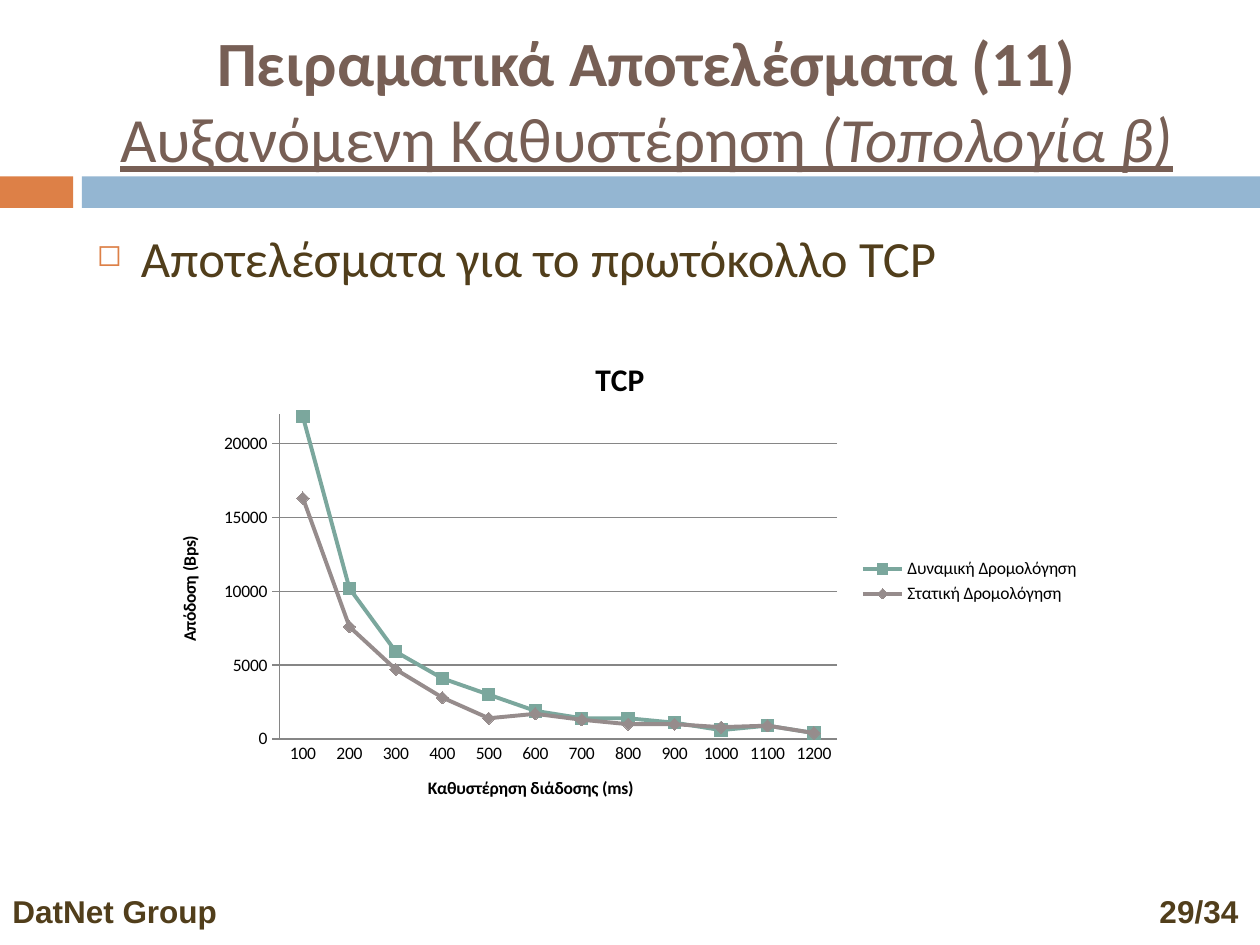
"""Build the slide on TCP throughput under growing delay."""
from lxml import etree
from pptx import Presentation, util as u
from pptx.chart.data import CategoryChartData
from pptx.dml.color import RGBColor
from pptx.enum import chart as ch, shapes, text
from pptx.oxml import parse_xml
from pptx.oxml.ns import nsdecls, qn


def tint(code):
    return RGBColor.from_string(code)


def write(para, words, size, code, bold=False, face="Calibri"):
    run = para.add_run()
    run.text = words
    run.font.size, run.font.name, run.font.bold = u.Pt(size), face, bold
    run.font.color.rgb = tint(code)
    return run.font


deck = Presentation()
deck.slide_width, deck.slide_height = u.Inches(10), u.Inches(7.5)
wide, high = deck.slide_width, deck.slide_height
col, row = wide // 100, high // 75
slide = deck.slides.add_slide(deck.slide_layouts[6])

for left, span, code in ((0, 5.8, "DD8047"), (6.5, 93.5, "94B6D2")):
    bar = slide.shapes.add_shape(
        shapes.MSO_SHAPE.RECTANGLE, int(left * col), 14 * row, int(span * col), int(2.5 * row))
    bar.shadow.inherit = False
    bar.fill.solid()
    bar.fill.fore_color.rgb = tint(code)
    bar.line.fill.background()

paras = []
for left, top, span, tall in (
        (6.7, 2.5, 89.2, 10.8), (6.7, 17.5, 89.2, 8), (0, 70.3, 100, 4)):
    box = slide.shapes.add_textbox(
        int(left * col), int(top * row), int(span * col), int(tall * row))
    box.text_frame.word_wrap = True
    paras.append(box.text_frame.paragraphs[0])
    if not left or top > 10:
        continue
    box.text_frame.vertical_anchor = text.MSO_ANCHOR.MIDDLE
title, body, foot = paras

title.alignment = text.PP_ALIGN.CENTER
write(title, "Πειραματικά Αποτελέσματα (11)", 36, "775F55", True)
title.add_line_break()
write(title, "Αυξανόμενη Καθυστέρηση ", 36, "775F55").underline = True
font = write(title, "(Τοπολογία β)", 36, "775F55")
font.underline = font.italic = True

body.space_before = u.Pt(7)
write(body, "Αποτελέσματα για το πρωτόκολλο TCP", 29, "513E1B")
props = body._p.get_or_add_pPr()
props.set("marL", str(u.Inches(0.35)))
props.set("indent", str(-u.Inches(0.35)))
mark = etree.SubElement(props, qn("a:buClr"))
etree.SubElement(mark, qn("a:srgbClr"), val="DD8047")
etree.SubElement(props, qn("a:buSzPct"), val="60000")
etree.SubElement(props, qn("a:buChar"), char="◻")

write(foot, "DatNet Group\t29/34", 18, "513E1B", True, "Arial")
tabs = etree.SubElement(foot._p.get_or_add_pPr(), qn("a:tabLst"))
etree.SubElement(tabs, qn("a:tab"), pos=str(u.Inches(9.73)), algn="r")

data = CategoryChartData(number_format="0")
data.categories = [str(n) for n in range(100, 1300, 100)]
data.add_series("Δυναμική Δρομολόγηση", (
    21800, 10200, 5900, 4100, 3000, 1900, 1400, 1400, 1100, 600, 900, 400))
data.add_series("Στατική Δρομολόγηση", (
    16300, 7600, 4700, 2800, 1400, 1700, 1300, 1000, 1000, 800, 900, 400))
chart = slide.shapes.add_chart(
    ch.XL_CHART_TYPE.LINE_MARKERS, int(11.7 * col), int(26.6 * row),
    75 * col, int(39.1 * row), data).chart
chart.font.size, chart.font.name = u.Pt(10), "Calibri"
chart.font.color.rgb = tint("000000")
chart.has_title = chart.has_legend = True
chart.legend.position = ch.XL_LEGEND_POSITION.RIGHT
chart.legend.include_in_layout = False

down, across = chart.value_axis, chart.category_axis
for part, words, size in (
        (chart.chart_title, "ΤCP", 18), (down.axis_title, "Απόδοση (Bps)", 10),
        (across.axis_title, "Καθυστέρηση διάδοσης (ms)", 10)):
    write(part.text_frame.paragraphs[0], words, size, "000000", True)
down.minimum_scale, down.maximum_scale, down.major_unit = 0, 22000, 5000
down.major_tick_mark = ch.XL_TICK_MARK.CROSS
across.major_tick_mark = ch.XL_TICK_MARK.NONE
down.tick_labels.number_format = "0"
down.tick_labels.number_format_is_linked = False
for line in (down.format.line, across.format.line, down.major_gridlines.format.line):
    line.color.rgb, line.width = tint("868686"), u.Pt(0.75)

plot = chart.plots[0]
plot.vary_by_categories = False
signs = ch.XL_MARKER_STYLE.SQUARE, ch.XL_MARKER_STYLE.DIAMOND
for line, code, sign in zip(plot.series, ("7BA79D", "968C8C"), signs):
    line.smooth = False
    line.format.line.color.rgb, line.format.line.width = tint(code), u.Pt(2.25)
    line.marker.style, line.marker.size = sign, 7
    line.marker.format.fill.solid()
    line.marker.format.fill.fore_color.rgb = tint(code)
    line.marker.format.line.color.rgb = tint(code)

area = chart._chartSpace.chart.plotArea
for old in area.findall(qn("c:layout")):
    area.remove(old)
rules = [("layoutTarget", "inner"), ("xMode", "edge"), ("yMode", "edge"),
         ("x", 0.14), ("y", 0.16), ("w", 0.59), ("h", 0.66)]
inner = "".join(f'<c:{key} val="{val}"/>' for key, val in rules)
area.insert(0, parse_xml(
    f'<c:layout {nsdecls("c")}><c:manualLayout>{inner}</c:manualLayout></c:layout>'))

deck.save("out.pptx")
